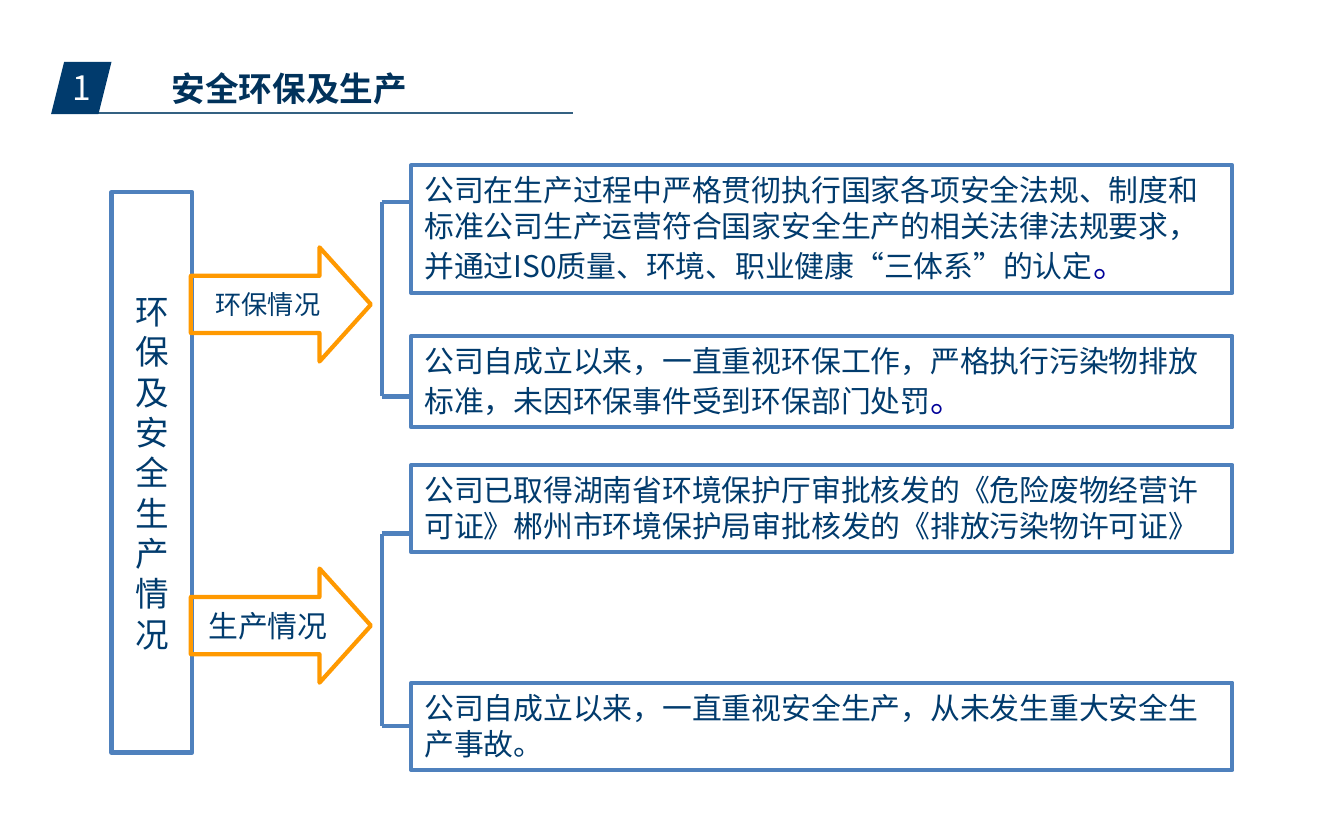
from dataclasses import dataclass
from typing import NamedTuple, Optional

from lxml.etree import SubElement
from pptx import Presentation
from pptx.dml.color import RGBColor
from pptx.enum.shapes import MSO_CONNECTOR, MSO_SHAPE
from pptx.enum.text import MSO_ANCHOR, MSO_AUTO_SIZE, PP_ALIGN
from pptx.oxml.ns import qn
from pptx.util import Emu, Inches, Pt


@dataclass(frozen=True)
class Theme:
    font: str = "Noto Sans CJK SC"
    navy: str = "013B6D"
    title: str = "01325B"
    frame: str = "4F81BD"
    arrow: str = "FF9900"
    stop: str = "000099"
    rule: str = "346182"
    white: str = "FFFFFF"
    small: int = 14
    body: int = 16
    large: int = 18
    thick: float = 2.25
    thin: float = 0.75


class Area(NamedTuple):
    """Left, top, width and height in grid units."""
    x: float
    y: float
    w: float
    h: float

    @property
    def middle(self) -> float:
        return self.y + self.h / 2


class Run(NamedTuple):
    text: str
    size: int
    color: str
    bold: bool = False


class Statement(NamedTuple):
    top: float
    height: float
    branch: float  # row where the bracket meets the box
    runs: list[Run]


class Topic(NamedTuple):
    arrow_top: float
    label: Run
    statements: list[Statement]


T = Theme()
COLUMNS = 100  # square grid, 100 columns by 62.5 rows
ARROW_X, ARROW_W, ARROW_H = 14.2, 13.4, 8.5
SPINE_X, BOX_X, BOX_W = 28.4, 30.6, 61.1

prs = Presentation()
prs.slide_width, prs.slide_height = Inches(10), Inches(6.25)
s = prs.slides.add_slide(prs.slide_layouts[6])


def grid(n: float) -> Emu:
    return Emu(round(n * prs.slide_width / COLUMNS))


def body_run(text: str) -> Run:
    return Run(text, T.body, T.navy)


def write(sp, paragraphs: list[list[Run]], align=PP_ALIGN.LEFT,
          anchor=MSO_ANCHOR.TOP, wrap: bool = False, grow: bool = False) -> None:
    tf = sp.text_frame
    tf.word_wrap, tf.vertical_anchor = wrap, anchor
    tf.auto_size = MSO_AUTO_SIZE.SHAPE_TO_FIT_TEXT if grow else MSO_AUTO_SIZE.NONE
    for i, runs in enumerate(paragraphs):
        p = tf.add_paragraph() if i else tf.paragraphs[0]
        p.alignment = align
        for run in runs:
            r = p.add_run()
            r.text = run.text
            r.font.name, r.font.size, r.font.bold = T.font, Pt(run.size), run.bold
            r.font.color.rgb = RGBColor.from_string(run.color)
            SubElement(r.font._element, qn("a:ea")).set("typeface", T.font)


def shape(kind, area: Area, line: Optional[str] = None, fill: Optional[str] = None):
    sp = s.shapes.add_shape(kind, *map(grid, area))
    sp.shadow.inherit = False
    if fill:
        sp.fill.solid()
        sp.fill.fore_color.rgb = RGBColor.from_string(fill)
    else:
        sp.fill.background()
    if line:
        sp.line.color.rgb, sp.line.width = RGBColor.from_string(line), Pt(T.thick)
    else:
        sp.line.fill.background()
    return sp


def connect(x1: float, y1: float, x2: float, y2: float,
            color: str = T.frame, width: float = T.thick):
    c = s.shapes.add_connector(MSO_CONNECTOR.STRAIGHT, *map(grid, (x1, y1, x2, y2)))
    c.line.color.rgb, c.line.width = RGBColor.from_string(color), Pt(width)
    SubElement(c._element.spPr, qn("a:effectLst"))
    return c


def textbox(area: Area, run: Run, align=PP_ALIGN.LEFT) -> None:
    write(s.shapes.add_textbox(*map(grid, area)), [[run]], align, grow=True)


def draw_statement(item: Statement) -> float:
    """Draw a box with its branch and return the row of the branch."""
    area = Area(BOX_X, item.top, BOX_W, item.height)
    sp = shape(MSO_SHAPE.RECTANGLE, area, T.frame)
    write(sp, [item.runs], wrap=True, grow=True)
    at_middle = abs(item.branch - area.middle) < 0.2
    row = area.middle if at_middle else item.branch
    c = connect(SPINE_X, row, BOX_X, row)
    if at_middle:
        c.end_connect(sp, 1)
    return row


def draw_topic(topic: Topic) -> None:
    sp = shape(MSO_SHAPE.RIGHT_ARROW,
               Area(ARROW_X, topic.arrow_top, ARROW_W, ARROW_H), T.arrow)
    sp.adjustments[0], sp.adjustments[1] = 0.5, 0.45
    write(sp, [[topic.label]], PP_ALIGN.CENTER, MSO_ANCHOR.MIDDLE)
    rows = [draw_statement(item) for item in topic.statements]
    connect(SPINE_X, rows[0], SPINE_X, rows[-1])


STOP = Run("。", T.large, T.stop)
TOPICS = [
    Topic(18.4, Run("环保情况", T.small, T.navy), [
        Statement(12.3, 9.5, 15, [body_run(
            "公司在生产过程中严格贯彻执行国家各项安全法规、制度和标准"
            "公司生产运营符合国家安全生产的相关法律法规要求，"
            "并通过IS0质量、环境、职业健康“三体系”的认定"), STOP]),
        Statement(25, 6.8, 29.5, [body_run(
            "公司自成立以来，一直重视环保工作，严格执行污染物排放标准，"
            "未因环保事件受到环保部门处罚"), STOP]),
    ]),
    Topic(42.3, body_run("生产情况"), [
        Statement(34.6, 6.5, 39.7, [body_run(
            "公司已取得湖南省环境保护厅审批核发的《危险废物经营许可证》"
            "郴州市环境保护局审批核发的《排放污染物许可证》")]),
        Statement(50.8, 6.5, 54.2, [body_run(
            "公司自成立以来，一直重视安全生产，从未发生重大安全生产事故。")]),
    ]),
]

subject = shape(MSO_SHAPE.RECTANGLE, Area(8.3, 14.3, 6, 41.7), T.frame)
write(subject, [[Run(char, T.large, T.navy)] for char in "环保及安全生产情况"],
      PP_ALIGN.CENTER, MSO_ANCHOR.MIDDLE)
for topic in TOPICS:
    draw_topic(topic)

connect(7.1, 8.4, 42.6, 8.4, T.rule, T.thin)
shape(MSO_SHAPE.PARALLELOGRAM, Area(3.8, 4.6, 4.5, 3.9), fill=T.navy)
textbox(Area(4.3, 4.5, 3.5, 4), Run("1", T.large, T.white), PP_ALIGN.CENTER)
textbox(Area(11.8, 4.6, 19.7, 4), Run("安全环保及生产", T.large, T.title, True))

prs.save("out.pptx")
